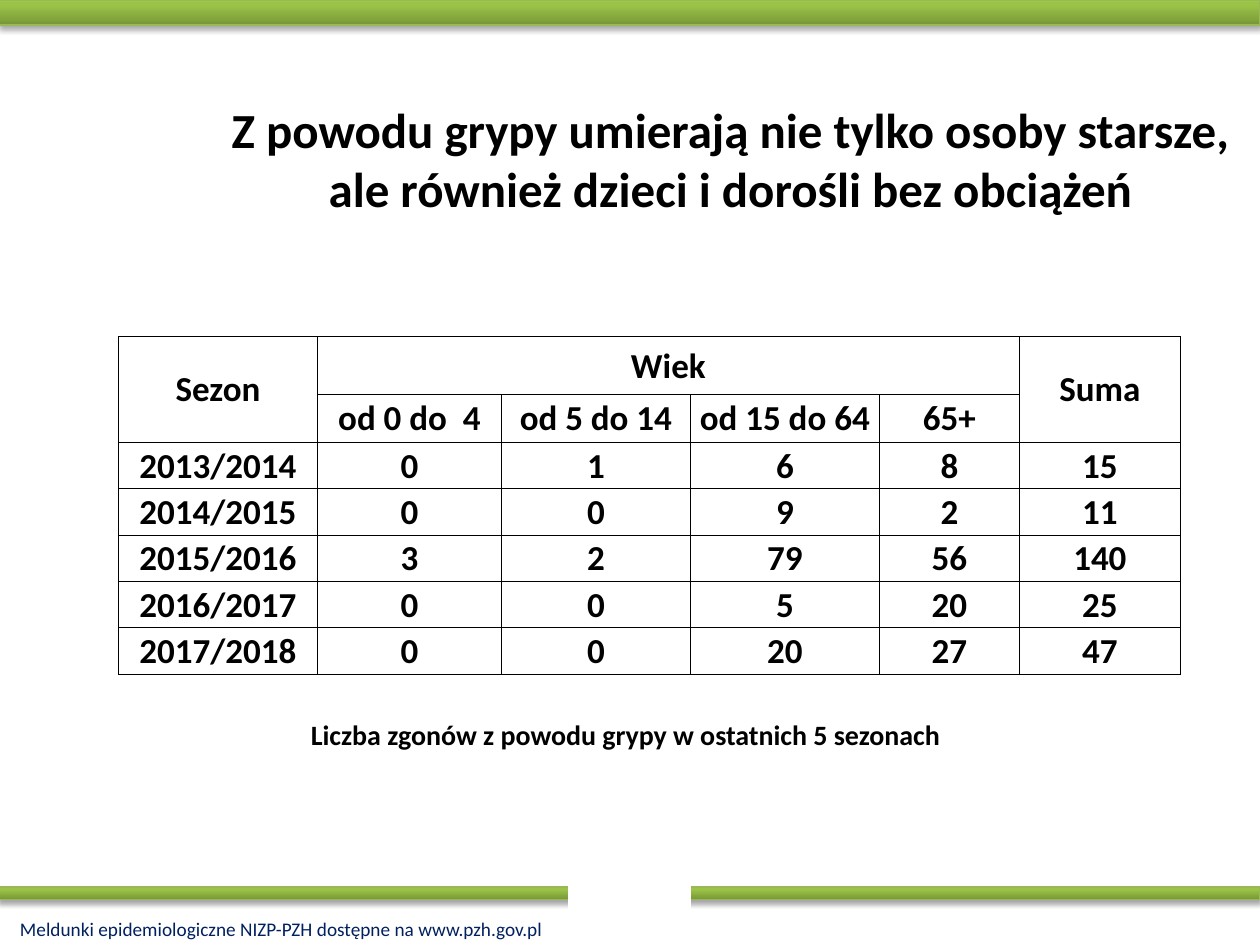
from dataclasses import dataclass
from lxml import etree
from pptx import Presentation
from pptx.dml.color import RGBColor
from pptx.enum.shapes import MSO_SHAPE
from pptx.enum.text import MSO_ANCHOR, PP_ALIGN
from pptx.oxml.ns import qn
from pptx.util import Inches, Pt

RECT = MSO_SHAPE.RECTANGLE
MID, TOP = MSO_ANCHOR.MIDDLE, MSO_ANCHOR.TOP
MIDST, LEFT = PP_ALIGN.CENTER, PP_ALIGN.LEFT
UNIT = 0.1


@dataclass(frozen=True)
class Theme:
    font: str = "Calibri"
    ink: str = "000000"
    navy: str = "002060"
    white: str = "FFFFFF"
    edge: str = "98B955"
    fade: tuple = ((0, "779737"), (80, "9BC348"), (100, "9DC746"))
    head: int = 28
    body: int = 20
    note: int = 16
    foot: int = 11


def grid(*cells):
    return [Inches(cell * UNIT) for cell in cells]


def node(root, tag, **attrs):
    return etree.SubElement(root, qn(tag), {k: str(v) for k, v in attrs.items()})


def tint(root, color):
    return node(root, "a:srgbClr", val=color)


class Page:
    def __init__(self, deck, theme):
        self.theme = theme
        self.slide = deck.slides.add_slide(deck.slide_layouts[6])

    def block(self, x, y, w, h, line, width):
        shape = self.slide.shapes.add_shape(RECT, *grid(x, y, w, h))
        shape.shadow.inherit = False
        shape.fill.solid()
        shape.fill.fore_color.rgb = RGBColor.from_string(self.theme.white)
        shape.line.color.rgb = RGBColor.from_string(line)
        shape.line.width = Pt(width)
        return shape

    def bar(self, y, h):
        shape = self.block(-0.1, y, 100.1, h, self.theme.edge, 0.75)
        props = shape.element.spPr
        grad = etree.Element(qn("a:gradFill"), rotWithShape="1")
        stops = node(grad, "a:gsLst")
        for share, color in self.theme.fade:
            tint(node(stops, "a:gs", pos=share * 1000), color)
        node(grad, "a:lin", ang=270 * 60000, scaled=0)
        props.replace(props.find(qn("a:solidFill")), grad)
        shade = node(props.find(qn("a:effectLst")), "a:outerShdw",
                     blurRad=Pt(3.1), dist=Pt(1.8), dir=90 * 60000, rotWithShape=0)
        node(tint(shade, self.theme.ink), "a:alpha", val=35000)

    def span(self, para, text, size, color, bold, align):
        para.alignment = align
        run = para.add_run()
        run.text = text
        font = run.font
        font.name, font.size, font.bold = self.theme.font, Pt(size), bold
        font.color.rgb = RGBColor.from_string(color)

    def text(self, x, y, w, h, text, size, color, bold=True, align=MIDST, anchor=MID):
        frame = self.slide.shapes.add_textbox(*grid(x, y, w, h)).text_frame
        frame.word_wrap = True
        frame.vertical_anchor = anchor
        self.span(frame.paragraphs[0], text, size, color, bold, align)

    def frame(self, cell):
        cell.fill.background()
        props = cell._tc.get_or_add_tcPr()
        for spot, side in enumerate(("a:lnL", "a:lnR", "a:lnT", "a:lnB")):
            line = node(props, side, w=Pt(0.5))
            tint(node(line, "a:solidFill"), self.theme.ink)
            props.insert(spot, line)

    def table(self, x, y, cols, rows, data, spans):
        place = grid(x, y, sum(cols), sum(rows))
        table = self.slide.shapes.add_table(len(rows), len(cols), *place).table
        table.first_row = table.horz_banding = False
        for col, width in zip(table.columns, grid(*cols)):
            col.width = width
        for row, height in zip(table.rows, grid(*rows)):
            row.height = height
        for first, last in spans:
            table.cell(*first).merge(table.cell(*last))
        for r, line in enumerate(data):
            for c, text in enumerate(line):
                cell = table.cell(r, c)
                cell.margin_left = cell.margin_right = cell.margin_top = Inches(0.01)
                cell.margin_bottom = 0
                cell.vertical_anchor = MID
                self.frame(cell)
                if text != "":
                    self.span(cell.text_frame.paragraphs[0], str(text),
                              self.theme.body, self.theme.ink, True, MIDST)


def main():
    deck = Presentation()
    deck.slide_width, deck.slide_height = grid(100, 75)
    theme = Theme()
    page = Page(deck, theme)

    page.bar(70.4, 1)
    page.block(45.2, 66.9, 9.5, 7.6, theme.white, 2)
    page.bar(0, 2)

    page.text(16.2, 7.4, 83.5, 10.4,
              "Z powodu grypy umierają nie tylko osoby starsze, "
              "ale również dzieci i dorośli bez obciążeń", theme.head, theme.ink)
    page.text(0.6, 72.3, 49.2, 2.9,
              "Meldunki epidemiologiczne NIZP-PZH dostępne na www.pzh.gov.pl",
              theme.foot, theme.navy, False, LEFT, TOP)

    deaths = {
        "2013/2014": (0, 1, 6, 8, 15),
        "2014/2015": (0, 0, 9, 2, 11),
        "2015/2016": (3, 2, 79, 56, 140),
        "2016/2017": (0, 0, 5, 20, 25),
        "2017/2018": (0, 0, 20, 27, 47),
    }
    heads = [
        ("Sezon", "Wiek", "", "", "", "Suma"),
        ("", "od 0 do  4", "od 5 do 14", "od 15 do 64", "65+", ""),
    ]
    data = heads + [(year, *counts) for year, counts in deaths.items()]
    spans = [((0, 0), (1, 0)), ((0, 1), (0, 4)), ((0, 5), (1, 5))]
    page.table(9.4, 26.7, (15.8, 14.6, 15, 15, 11.1, 12.8),
               (4.6, 3.8) + (3.68,) * len(deaths), data, spans)

    page.text(15.9, 56.2, 67.5, 4.2,
              "Liczba zgonów z powodu grypy w ostatnich 5 sezonach",
              theme.note, theme.ink)
    deck.save("out.pptx")


if __name__ == "__main__":
    main()
